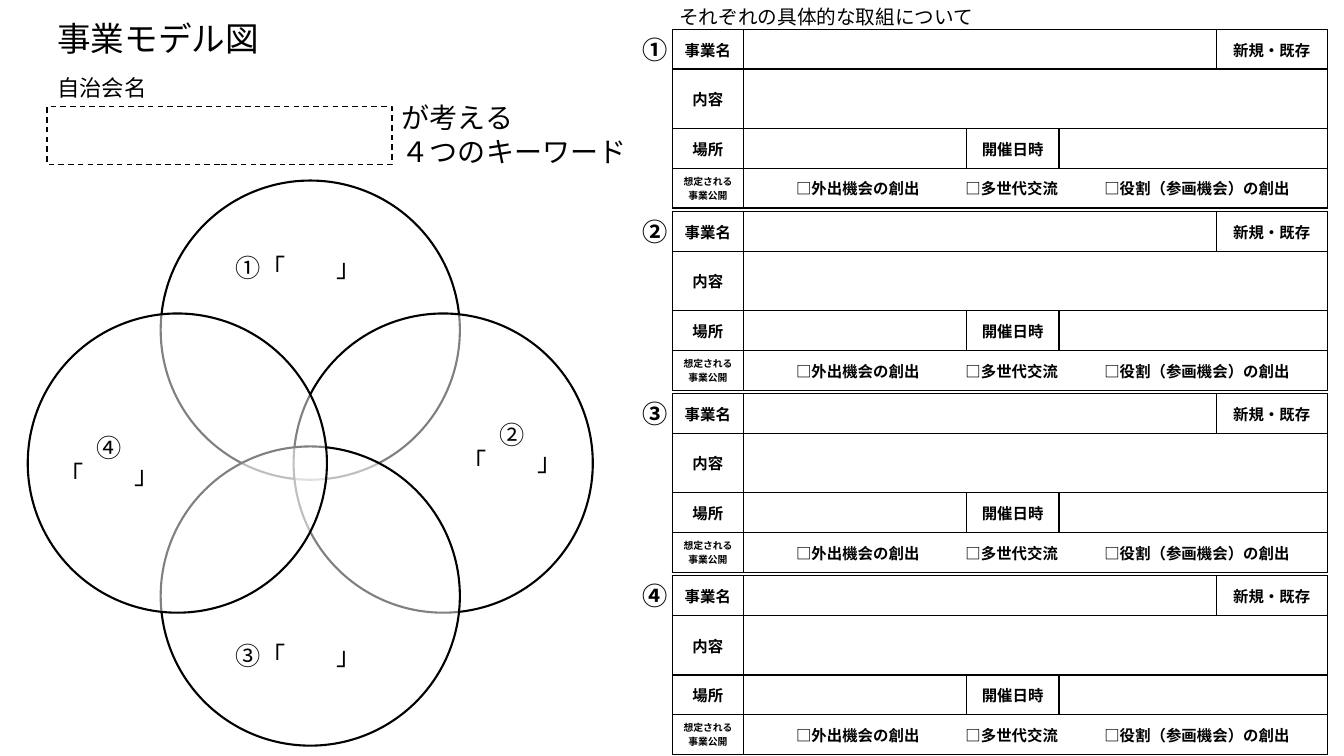
from lxml.etree import SubElement
from pptx import Presentation
from pptx.dml.color import RGBColor
from pptx.enum.dml import MSO_LINE
from pptx.enum.shapes import MSO_SHAPE as SHAPE
from pptx.enum.text import MSO_ANCHOR as ANCHOR, MSO_AUTO_SIZE as FIT, PP_ALIGN as ALIGN
from pptx.oxml.ns import qn
from pptx.util import Cm, Pt

COLORS = {"ink": "000000", "paper": "FFFFFF"}
INK = RGBColor.from_string(COLORS["ink"])
PAPER = RGBColor.from_string(COLORS["paper"])
CJK = "Noto Sans CJK JP"


def write(frame, text, size=18, font=CJK, bold=False, align=ALIGN.LEFT,
          anchor=ANCHOR.TOP, wrap=False, inset=None, spacing=None):
    """Fill a text frame, one paragraph for each line of text."""
    frame.word_wrap = wrap
    frame.auto_size = FIT.NONE
    frame.vertical_anchor = anchor
    if inset is not None:
        frame.margin_left = frame.margin_right = Cm(inset)
        frame.margin_top = frame.margin_bottom = Cm(inset)
    for index, line in enumerate(text.split("\n")):
        para = frame.add_paragraph() if index else frame.paragraphs[0]
        para.alignment = align
        para.line_spacing = spacing
        span = para.add_run()
        span.text = line
        span.font.size = Pt(size)
        span.font.bold = bold
        span.font.color.rgb = INK
        span.font.name = font
        SubElement(span.font._element, qn("a:ea"), typeface=CJK)


def add_label(left, top, width, height, text, **style):
    box = page.shapes.add_textbox(Cm(left), Cm(top), Cm(width), Cm(height))
    write(box.text_frame, text, **style)


deck = Presentation()
deck.slide_width, deck.slide_height = Cm(33.87), Cm(19.05)
page = deck.slides.add_slide(deck.slide_layouts[5])

title = page.shapes.title
title.left, title.top, title.width, title.height = Cm(1.19), Cm(0.33), Cm(5.64), Cm(1.27)
write(title.text_frame, "事業モデル図", size=24)

add_label(1.19, 1.75, 2.79, 0.94, "自治会名", size=16, font="Arial")
add_label(9.88, 2.41, 6.22, 1.96, "が考える\n４つのキーワード", size=20, font="Arial")
add_label(16.87, 0, 8, 0.86, "それぞれの具体的な取組について", size=14, font="Arial")

name_field = page.shapes.add_shape(SHAPE.RECTANGLE, Cm(1.19), Cm(2.69), Cm(8.69), Cm(1.45))
name_field.shadow.inherit = False
name_field.fill.background()
name_field.line.color.rgb = INK
name_field.line.width = Pt(1)
name_field.line.dash_style = MSO_LINE.DASH

# Four overlapping keyword circles: direction from the centre, label box
CENTER_X, CENTER_Y, OFFSET, DIAMETER = 7.82, 11.67, 3.35, 7.54
keywords = [
    ("①", (0, -1), (4.61, 5.59, 5.82, 2.39)),
    ("②", (1, 0), (11.46, 8.43, 2.9, 5.82)),
    ("③", (0, 1), (4.61, 15.37, 5.82, 2.39)),
    ("④", (-1, 0), (1.3, 8.76, 2.9, 5.82)),
]
for number, (step_x, step_y), label_area in keywords:
    circle = page.shapes.add_shape(
        SHAPE.OVAL,
        Cm(CENTER_X + step_x * OFFSET - DIAMETER / 2),
        Cm(CENTER_Y + step_y * OFFSET - DIAMETER / 2),
        Cm(DIAMETER), Cm(DIAMETER))
    circle.shadow.inherit = False
    circle.fill.solid()
    circle.fill.fore_color.rgb = PAPER
    fill_color = circle._element.spPr.find(qn("a:solidFill")).find(qn("a:srgbClr"))
    SubElement(fill_color, qn("a:alpha"), val="50000")
    circle.line.color.rgb = INK
    circle.line.width = Pt(1.5)
    add_label(*label_area, number + "「　　」", align=ALIGN.CENTER,
              anchor=ANCHOR.MIDDLE, wrap=True, inset=0, spacing=0.9)

# One entry form for each keyword
FORM_LEFT, FORM_TOP, FORM_PITCH = 16.94, 0.74, 4.59
COLUMN_WIDTHS = [1.8, 5.61, 2.34, 3.96, 2.8]
ROW_HEIGHTS = [1, 1.5, 1, 1]
MERGES = [(0, 1, 3), (1, 1, 4), (2, 3, 4), (3, 1, 4)]
HEADINGS = {
    (0, 0): ("事業名", 11),
    (0, 4): ("新規・既存", 11),
    (1, 0): ("内容", 11),
    (2, 0): ("場所", 11),
    (2, 2): ("開催日時", 11),
    (3, 0): ("想定される事業公開", 7),
}
EFFECTS = "□外出機会の創出\t□多世代交流\t□役割（参画機会）の創出"
EFFECT_TABS = [4.27, 7.77]

for index, (number, _, _) in enumerate(keywords):
    top = FORM_TOP + index * FORM_PITCH
    add_label(15.93, top, 1.14, 1.07, number, bold=True)
    form = page.shapes.add_table(
        len(ROW_HEIGHTS), len(COLUMN_WIDTHS), Cm(FORM_LEFT), Cm(top),
        Cm(sum(COLUMN_WIDTHS)), Cm(sum(ROW_HEIGHTS))).table
    form.first_row = form.horz_banding = False
    for column, width in zip(form.columns, COLUMN_WIDTHS):
        column.width = Cm(width)
    for row, height in zip(form.rows, ROW_HEIGHTS):
        row.height = Cm(height)

    for cell in form.iter_cells():
        properties = cell._tc.get_or_add_tcPr()
        for side in ("lnL", "lnR", "lnT", "lnB"):
            border = SubElement(properties, qn("a:" + side), w=str(Pt(1)))
            SubElement(SubElement(border, qn("a:solidFill")), qn("a:srgbClr"), val=COLORS["ink"])
        cell.fill.background()
        # Keeps blank cells from stretching their rows
        cell.text_frame.paragraphs[0]._p.get_or_add_endParaRPr().set("sz", "1100")

    for row, first, last in MERGES:
        form.cell(row, first).merge(form.cell(row, last))
    for (row, column), (text, size) in HEADINGS.items():
        cell = form.cell(row, column)
        write(cell.text_frame, text, size=size, bold=True, align=ALIGN.CENTER, wrap=True)
        cell.vertical_anchor = ANCHOR.MIDDLE

    effects = form.cell(3, 1)
    write(effects.text_frame, EFFECTS, size=11, bold=True, wrap=True)
    effects.vertical_anchor = ANCHOR.MIDDLE
    effects.margin_left = Cm(1.32)
    tab_list = SubElement(effects.text_frame.paragraphs[0]._p.get_or_add_pPr(), qn("a:tabLst"))
    for position in EFFECT_TABS:
        SubElement(tab_list, qn("a:tab"), pos=str(Cm(position)), algn="l")

deck.save("out.pptx")
